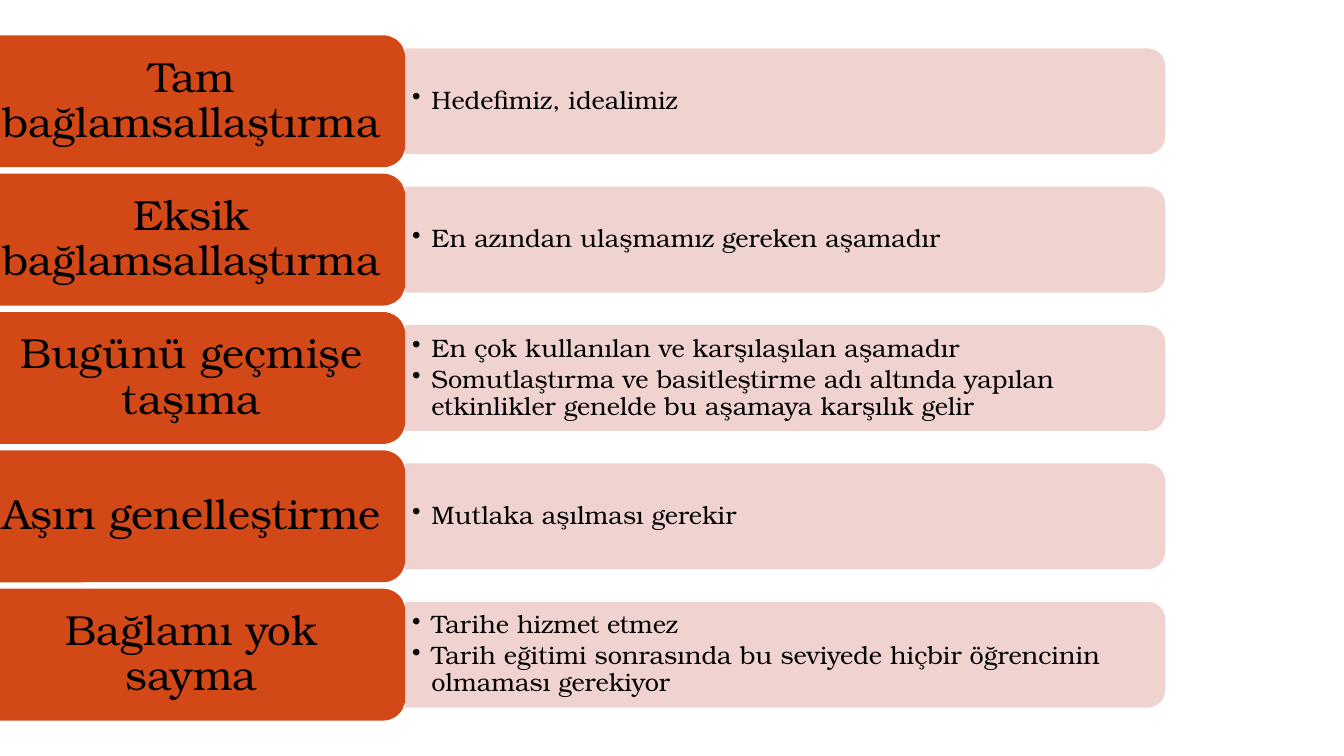
from dataclasses import dataclass
from lxml.etree import SubElement as Sub
from pptx import Presentation as Deck
from pptx.dml.color import RGBColor as Color
from pptx.enum.shapes import MSO_SHAPE as Form
from pptx.enum.text import MSO_ANCHOR as Anchor, PP_ALIGN as Align
from pptx.oxml.ns import qn
from pptx.util import Inches, Pt


@dataclass(frozen=True)
class Theme:
    face: str = "TeX Gyre Bonum"
    ink: str = "000000"
    tag: str = "D34817"
    bar: str = "EFCFCC"
    alpha: int = 90
    big: int = 30
    small: int = 18
    after: float = 2.7
    lead: float = 0.9


class Page:
    def __init__(self, deck, theme):
        self.theme = theme
        self.wide = deck.slide_width
        self.high = deck.slide_height
        self.shapes = deck.slides.add_slide(deck.slide_layouts[6]).shapes

    def area(self, left, mid, width, height):
        w, h = int(self.wide * width / 100), int(self.high * height / 100)
        x, y = int(self.wide * left / 100), int(self.high * mid / 100)
        return x, y - h // 2, w, h

    def block(self, form, area, color):
        shape = self.shapes.add_shape(form, *area)
        shape.shadow.inherit = False
        shape.fill.solid()
        shape.fill.fore_color.rgb = Color.from_string(color)
        shape.line.fill.background()
        return shape

    def frame(self, shape, side, edge):
        frame = shape.text_frame
        frame.word_wrap = True
        frame.vertical_anchor = Anchor.MIDDLE
        frame.margin_left = frame.margin_right = Inches(side)
        frame.margin_top = frame.margin_bottom = Inches(edge)
        return frame

    def add_text(self, para, text, size):
        para.line_spacing = self.theme.lead
        run = para.add_run()
        run.text = text
        run.font.name = self.theme.face
        run.font.size = Pt(size)
        run.font.color.rgb = Color.from_string(self.theme.ink)

    def bar(self, left, mid, width, height):
        x, y, w, h = self.area(left, mid, width, height)
        turned = x + (w - h) // 2, y + (h - w) // 2, h, w
        shape = self.block(Form.ROUND_2_SAME_RECTANGLE, turned, self.theme.bar)
        shape.rotation = 90
        tone = shape._element.spPr.find(qn("a:solidFill")).find(qn("a:srgbClr"))
        Sub(tone, qn("a:alpha"), val=str(self.theme.alpha * 1000))

    def bullets(self, left, mid, width, height, items):
        box = self.shapes.add_textbox(*self.area(left, mid, width, height))
        frame = self.frame(box, 0.07, 0.04)
        for n, item in enumerate(items):
            para = frame.add_paragraph() if n else frame.paragraphs[0]
            para.level = 1
            para.alignment = Align.LEFT
            para.space_after = Pt(self.theme.after)
            props = para._p.get_or_add_pPr()
            props.set("marL", str(Inches(0.19)))
            props.set("indent", str(-Inches(0.19)))
            Sub(props, qn("a:buChar"), char="•")
            self.add_text(para, item, self.theme.small)

    def tag(self, left, mid, width, height, text):
        area = self.area(left, mid, width, height)
        shape = self.block(Form.ROUNDED_RECTANGLE, area, self.theme.tag)
        para = self.frame(shape, 0.12, 0.06).paragraphs[0]
        para.alignment = Align.CENTER
        self.add_text(para, text, self.theme.big)


STAGES = [
    ("Tam bağlamsallaştırma", ["Hedefimiz, idealimiz"]),
    ("Eksik bağlamsallaştırma", ["En azından ulaşmamız gereken aşamadır"]),
    ("Bugünü geçmişe taşıma", [
        "En çok kullanılan ve karşılaşılan aşamadır",
        "Somutlaştırma ve basitleştirme adı altında yapılan etkinlikler "
        "genelde bu aşamaya karşılık gelir",
    ]),
    ("Aşırı genelleştirme", ["Mutlaka aşılması gerekir"]),
    ("Bağlamı yok sayma", [
        "Tarihe hizmet etmez",
        "Tarih eğitimi sonrasında bu seviyede hiçbir öğrencinin "
        "olmaması gerekiyor",
    ]),
]
FIRST, STEP = 13.4, 18.3
EDGE = 30.15


def main():
    deck = Deck()
    deck.slide_width, deck.slide_height = Inches(13.33), Inches(7.5)
    page = Page(deck, Theme())
    for n, (name, items) in enumerate(STAGES):
        mid = FIRST + n * STEP
        page.bar(EDGE, mid, 56.55, 14)
        page.bullets(EDGE, mid, 56.2, 12.5, items)
        page.tag(EDGE - 31.8, mid, 31.8, 17.45, name)
    deck.save("out.pptx")


if __name__ == "__main__":
    main()
